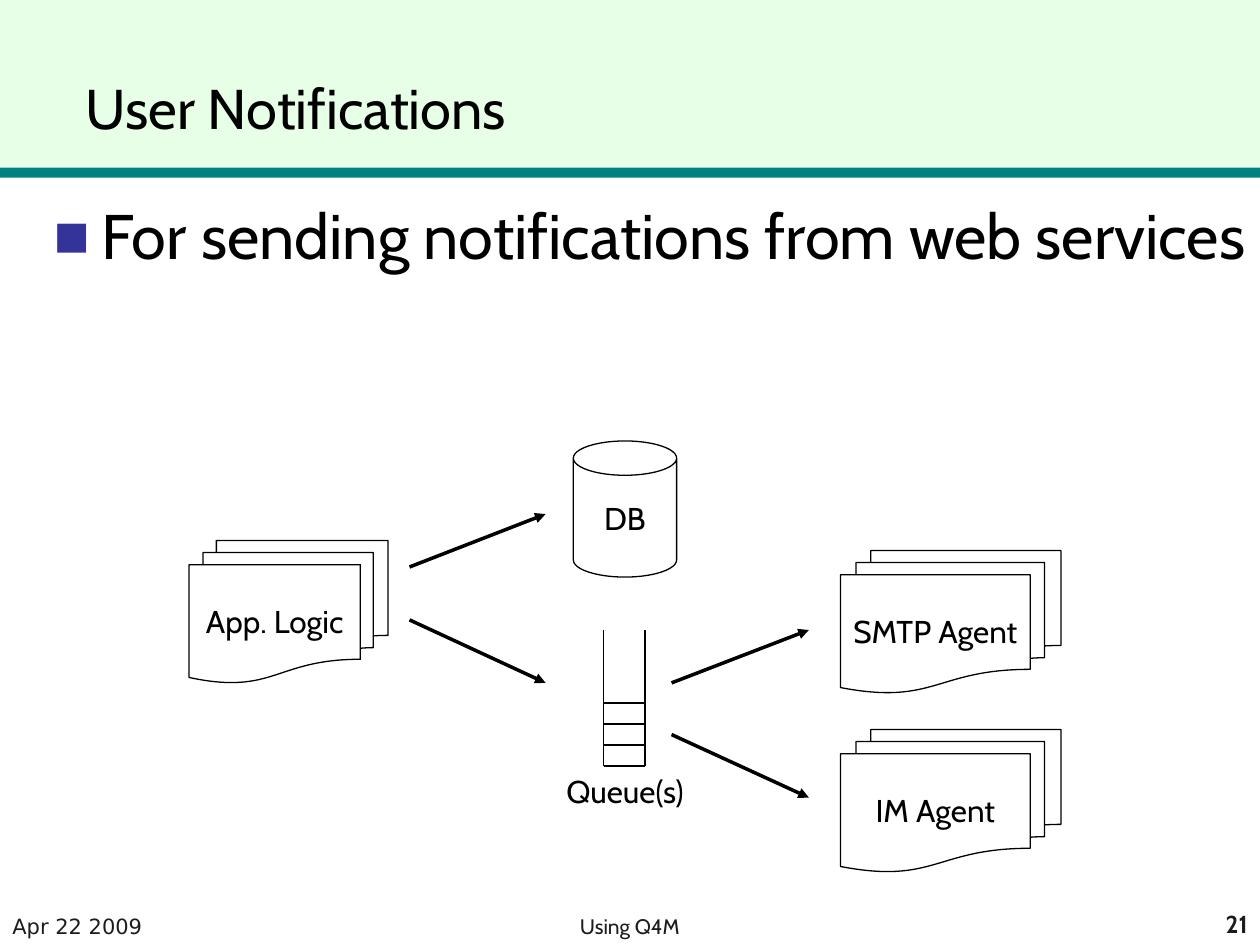
from dataclasses import dataclass

from lxml import etree
from pptx import Presentation, util as u
from pptx.dml.color import RGBColor
from pptx.enum import shapes, text
from pptx.oxml import ns

SHAPE = shapes.MSO_SHAPE
ALIGN = text.PP_ALIGN
ANCHOR = text.MSO_ANCHOR


@dataclass(frozen=True)
class Theme:
    font: str = "Cabin"
    date_font: str = "DejaVu Sans"
    black: str = "000000"
    white: str = "FFFFFF"
    footer: str = "1C1C1C"
    header: str = "E7FFE7"
    rule: str = "008080"
    bullet: str = "333399"
    title_size: float = 32
    body_size: float = 36
    label_size: float = 18
    footer_size: float = 12
    number_size: float = 14
    thin: float = 0.75
    thick: float = 2


@dataclass(frozen=True)
class Box:
    left: float
    top: float
    width: float
    height: float

    def emu(self) -> tuple:
        return tuple(u.Inches(v) for v in (self.left, self.top, self.width, self.height))


@dataclass(frozen=True)
class Node:
    label: str
    kind: SHAPE
    box: Box


@dataclass(frozen=True)
class Footer:
    words: str
    box: Box
    align: ALIGN
    font: str
    size: float
    bold: bool = False


T = Theme()

NODES = [
    Node("DB", SHAPE.CAN, Box(4.55, 3.5, 0.82, 1.08)),
    Node("App. Logic", SHAPE.FLOWCHART_MULTIDOCUMENT, Box(1.5, 4.29, 1.58, 1.13)),
    Node("SMTP Agent", SHAPE.FLOWCHART_MULTIDOCUMENT, Box(6.67, 4.37, 1.75, 1.13)),
    Node("IM Agent", SHAPE.FLOWCHART_MULTIDOCUMENT, Box(6.67, 5.79, 1.75, 1.13)),
]
ARROWS = [
    ((3.25, 4.5), (4.33, 4.08)),
    ((3.25, 4.92), (4.33, 5.42)),
    ((5.33, 5.42), (6.42, 5)),
    ((5.33, 5.83), (6.42, 6.33)),
]
FOOTERS = [
    Footer("Apr 22 2009", Box(0, 7.17, 2.08, 0.33), ALIGN.LEFT, T.date_font, T.footer_size),
    Footer("Using Q4M", Box(1, 7.17, 8, 0.33), ALIGN.CENTER, T.font, T.footer_size),
    Footer("21", Box(7.92, 7.17, 2.08, 0.33), ALIGN.RIGHT, T.font, T.number_size, True),
]


def rgb(value: str) -> RGBColor:
    return RGBColor.from_string(value)


def write(sp, words: str, size: float, align=ALIGN.LEFT, anchor=ANCHOR.TOP,
          wrap: bool = True, font: str = T.font, color: str = T.black, bold: bool = False):
    """Fill the first paragraph of a shape and return it."""
    tf = sp.text_frame
    tf.word_wrap = wrap
    tf.vertical_anchor = anchor
    p = tf.paragraphs[0]
    p.alignment = align
    r = p.add_run()
    r.text = words
    r.font.name, r.font.size, r.font.bold = font, u.Pt(size), bold
    r.font.color.rgb = rgb(color)
    return p


def add_filled(s, kind: SHAPE, box: Box, fill: str, outlined: bool = False):
    sp = s.shapes.add_shape(kind, *box.emu())
    sp.shadow.inherit = False
    sp.fill.solid()
    sp.fill.fore_color.rgb = rgb(fill)
    if outlined:
        sp.line.color.rgb = rgb(T.black)
        sp.line.width = u.Pt(T.thin)
    else:
        sp.line.fill.background()
    return sp


def add_node(s, node: Node) -> None:
    sp = add_filled(s, node.kind, node.box, T.white, outlined=True)
    if node.kind == SHAPE.CAN:
        sp.adjustments[0] = 0.332
    write(sp, node.label, T.label_size, ALIGN.CENTER, ANCHOR.MIDDLE, wrap=False)


def add_line(parent, start: tuple, end: tuple, width: float, arrow: bool = False) -> None:
    ends = [u.Inches(v) for v in (*start, *end)]
    line = parent.shapes.add_connector(shapes.MSO_CONNECTOR.STRAIGHT, *ends)
    line.line.color.rgb = rgb(T.black)
    line.line.width = u.Pt(width)
    if arrow:
        etree.SubElement(line.line._get_or_add_ln(), ns.qn("a:tailEnd"), type="triangle")
    etree.SubElement(line._element.spPr, ns.qn("a:effectLst"))


def add_queue(s) -> None:
    left, right, top, bottom, step = 4.79, 5.12, 5, 6.08, 1 / 6
    grp = s.shapes.add_group_shape()
    for x in (left, right):
        add_line(grp, (x, top), (x, bottom), T.thin)
    for i in range(4):
        y = bottom - i * step
        add_line(grp, (left, y), (right, y), T.thin)
    label = grp.shapes.add_textbox(*Box(4.35, bottom, 1.22, 0.4).emu())
    write(label, "Queue(s)", T.label_size, ALIGN.CENTER, wrap=False)


def add_bullet(p) -> None:
    pPr = p._p.get_or_add_pPr()
    indent = u.Inches(0.38)
    pPr.set("marL", str(indent))
    pPr.set("indent", str(-indent))
    color = etree.SubElement(pPr, ns.qn("a:buClr"))
    etree.SubElement(color, ns.qn("a:srgbClr"), val=T.bullet)
    etree.SubElement(pPr, ns.qn("a:buSzPct"), val="60000")
    etree.SubElement(pPr, ns.qn("a:buFont"), typeface=T.date_font)
    etree.SubElement(pPr, ns.qn("a:buChar"), char="■")


def main() -> None:
    prs = Presentation()
    prs.slide_width, prs.slide_height = u.Inches(10), u.Inches(7.5)
    s = prs.slides.add_slide(prs.slide_layouts[5])

    # Header band and rule, with the title in front
    add_filled(s, SHAPE.RECTANGLE, Box(0, 0, 10, 1.33), T.header)
    add_filled(s, SHAPE.RECTANGLE, Box(0, 1.33, 10, 0.08), T.rule)
    title = s.shapes.title
    s.shapes._spTree.append(title._element)
    title.left, title.top, title.width, title.height = Box(0.58, 0, 9.42, 1.17).emu()
    write(title, "User Notifications", T.title_size, anchor=ANCHOR.BOTTOM)

    # Footer line
    for f in FOOTERS:
        sp = s.shapes.add_textbox(*f.box.emu())
        write(sp, f.words, f.size, f.align, ANCHOR.BOTTOM,
              font=f.font, color=T.footer, bold=f.bold)

    # Bulleted statement
    body = s.shapes.add_textbox(*Box(0.33, 1.58, 9.67, 1.67).emu())
    p = write(body, "For sending notifications from web services", T.body_size)
    add_bullet(p)
    p.line_spacing = 0.9

    # Flow diagram
    for node in NODES:
        add_node(s, node)
    add_queue(s)
    for start, end in ARROWS:
        add_line(s, start, end, T.thick, arrow=True)

    prs.save("out.pptx")


if __name__ == "__main__":
    main()
